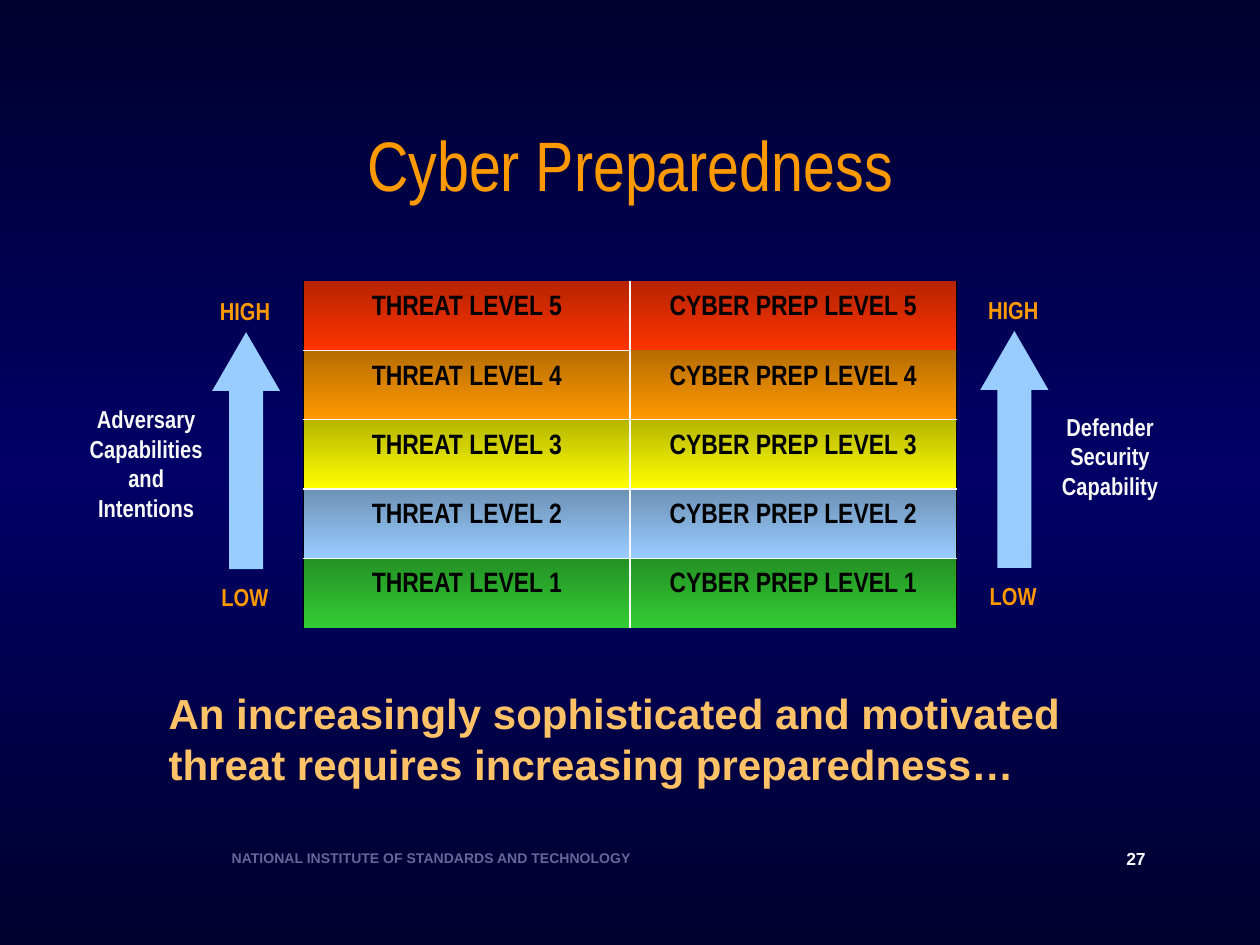
from lxml import etree
from pptx import Presentation
from pptx.dml.color import RGBColor
from pptx.enum.shapes import MSO_SHAPE
from pptx.enum.text import MSO_ANCHOR, PP_ALIGN
from pptx.oxml.ns import nsdecls, qn
from pptx.util import Pt

LEFT, MID = PP_ALIGN.LEFT, PP_ALIGN.CENTER
CENTER = MSO_ANCHOR.MIDDLE
ARROW = MSO_SHAPE.UP_ARROW

ORANGE = RGBColor(0xFF, 0x99, 0x00)
SAND = RGBColor(0xFF, 0xC2, 0x66)
WHITE = RGBColor(0xF8, 0xF8, 0xF8)
BLACK = RGBColor(0, 0, 0)
BLUE = RGBColor(0x99, 0xCC, 0xFF)
GREY = RGBColor(0x66, 0x66, 0x99)
NIGHT = RGBColor(0, 0, 0x2F)
NAVY = RGBColor(0, 0, 0x66)
RED = RGBColor(0xFF, 0x33, 0x00)
YELLOW = RGBColor(0xFF, 0xFF, 0x00)
GREEN = RGBColor(0x33, 0xCC, 0x33)

SANS, NARROW = "Arial", "Arial Narrow"
PLAIN = "{2D5ABB26-0587-4C30-8999-92F81FD0307C}"
DARK = 46275

TITLE = "Cyber Preparedness"
HEADS = ["THREAT LEVEL", "CYBER PREP LEVEL"]
LEVELS = [(5, RED), (4, ORANGE), (3, YELLOW), (2, BLUE), (1, GREEN)]
SCALES = [(121.2, 165.6), (560.2, 164.9)]
NOTES = [
    ("Adversary Capabilities\nand\nIntentions",
     (41.8, 227.5, 83.5, 74.2), 14, NARROW, WHITE, MID),
    ("Defender Security\nCapability",
     (592.6, 231.8, 83.5, 57.6), 14, NARROW, WHITE, MID),
    ("An increasingly sophisticated and motivated threat requires "
     "increasing preparedness…",
     (89.3, 389.5, 573.8, 65.5), 24, SANS, SAND, LEFT),
    ("NATIONAL INSTITUTE OF STANDARDS AND TECHNOLOGY",
     (125.3, 481.7, 522, 16.6), 8, SANS, GREY, LEFT),
    ("27", (636.5, 481, 30.2, 19.4), 10, SANS, WHITE, LEFT),
]
TABLE = (173.5, 160.6, 373, 198)


def style(frame, size, face, color, align, bold=True):
    for para in frame.paragraphs:
        para.alignment = align
        for run in para.runs:
            run.font.size = Pt(size)
            run.font.name = face
            run.font.bold = bold
            run.font.color.rgb = color


def label(slide, text, box, size, face, color, align):
    frame = slide.shapes.add_textbox(*map(Pt, box)).text_frame
    frame.word_wrap = True
    frame.text = text
    style(frame, size, face, color, align)


def blend(stops):
    marks = "".join(
        f'<a:gs pos="{pos * 1000}"><a:srgbClr val="{color}">'
        + (f'<a:shade val="{shade}"/>' if shade else "")
        + "</a:srgbClr></a:gs>"
        for pos, color, shade in stops)
    return etree.fromstring(
        f'<a:gradFill {nsdecls("a")} rotWithShape="1"><a:gsLst>{marks}'
        '</a:gsLst><a:lin ang="5400000" scaled="0"/></a:gradFill>')


def border(side, color):
    return etree.fromstring(
        f'<a:ln{side} {nsdecls("a")} w="12700"><a:solidFill>'
        f'<a:srgbClr val="{color}"/></a:solidFill></a:ln{side}>')


def edges(row, col):
    lines = [("L", WHITE if col else BLACK), ("R", BLACK if col else WHITE)]
    if row > 0 and (row, col) != (1, 1):
        lines.append(("T", WHITE))
    if row < len(LEVELS) - 1 and (row, col) != (0, 1):
        lines.append(("B", WHITE))
    return lines


def grid(slide):
    frame = slide.shapes.add_table(len(LEVELS), len(HEADS), *map(Pt, TABLE))
    table = frame.table
    props = table._tbl.tblPr
    props.find(qn("a:tableStyleId")).text = PLAIN
    table.first_row = table.horz_banding = False
    for row, (level, color) in enumerate(LEVELS):
        for col, head in enumerate(HEADS):
            cell = table.cell(row, col)
            cell.margin_top = Pt(9)
            cell.text = f"{head} {level}"
            cell.text_frame.paragraphs[0].line_spacing = 0.9
            style(cell.text_frame, 16, NARROW, BLACK, MID)
            props = cell._tc.get_or_add_tcPr()
            for side, ink in edges(row, col):
                props.append(border(side, ink))
            props.append(blend([(0, color, DARK), (100, color, None)]))


def scale(slide, left, top):
    for text, drop in [("HIGH", 0), ("LOW", 163.5)]:
        box = (left - 6.8, top + drop, 51.1, 23.8)
        label(slide, text, box, 14, NARROW, ORANGE, MID)
    arrow = slide.shapes.add_shape(
        ARROW, Pt(left), Pt(top + 24.2), Pt(38.9), Pt(135.4))
    arrow.adjustments[0] = 0.5
    arrow.adjustments[1] = 0.865
    arrow.shadow.inherit = False
    arrow.fill.solid()
    arrow.fill.fore_color.rgb = BLUE
    arrow.line.fill.background()


def main():
    deck = Presentation()
    deck.slide_width, deck.slide_height = Pt(720), Pt(540)
    slide = deck.slides.add_slide(deck.slide_layouts[5])

    slide.background.fill.solid()
    back = slide.element.find(".//" + qn("p:bgPr"))
    back.replace(back[0], blend(
        [(0, NIGHT, None), (50, NAVY, None), (100, NIGHT, None)]))

    title = slide.shapes.title
    title.left, title.top, title.width, title.height = map(
        Pt, (54, 48.2, 612, 90))
    title.text_frame.text = TITLE
    title.text_frame.vertical_anchor = CENTER
    style(title.text_frame, 40, NARROW, ORANGE, MID, False)

    grid(slide)
    for spot in SCALES:
        scale(slide, *spot)
    for note in NOTES:
        label(slide, *note)
    deck.save("out.pptx")


if __name__ == "__main__":
    main()
